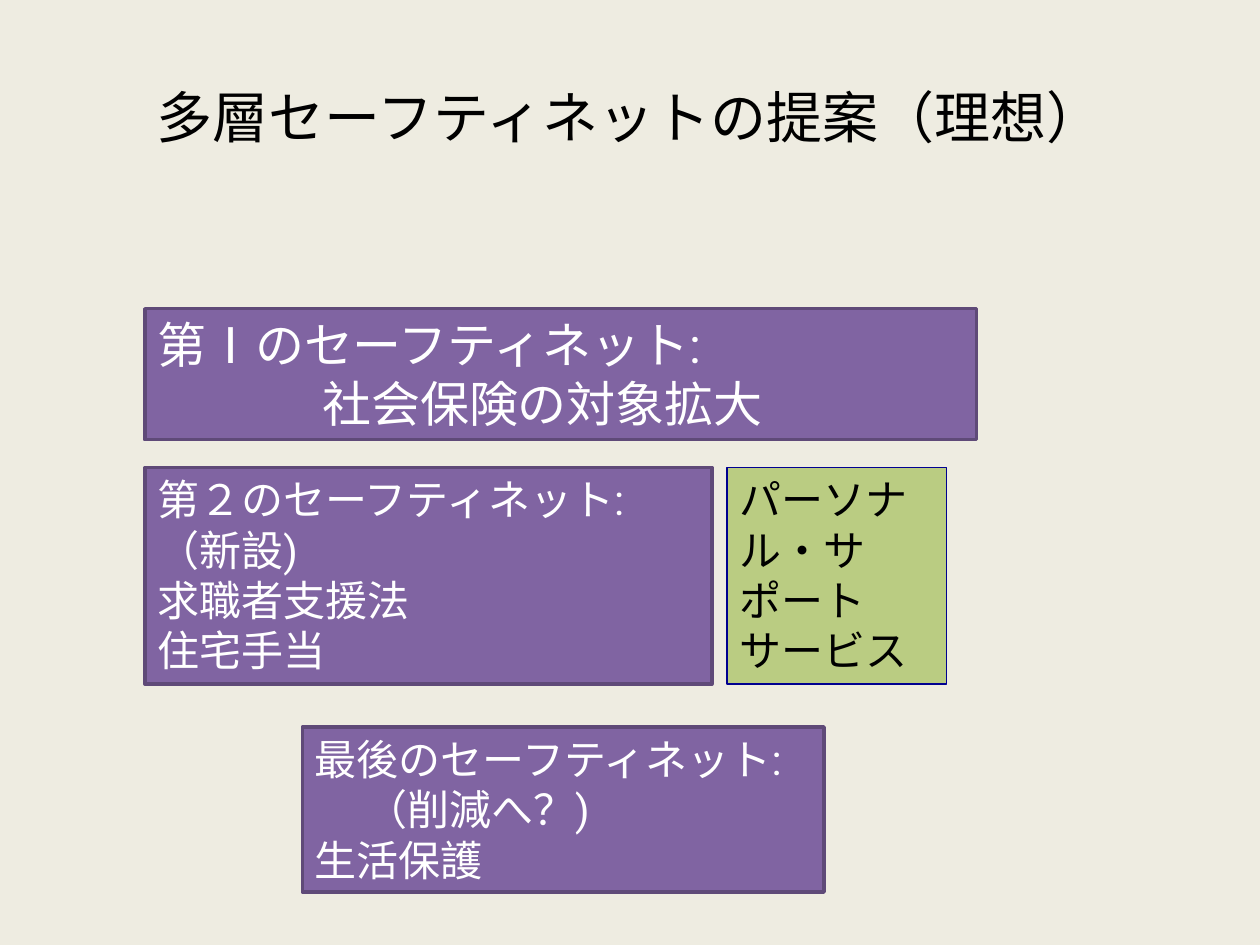
from pptx import Presentation
from pptx.dml.color import RGBColor
from pptx.enum.shapes import MSO_SHAPE
from pptx.enum.text import MSO_ANCHOR, PP_ALIGN
from pptx.util import Inches, Pt

RECT = MSO_SHAPE.RECTANGLE
TOP, MIDDLE = MSO_ANCHOR.TOP, MSO_ANCHOR.MIDDLE
LEFT, CENTER = PP_ALIGN.LEFT, PP_ALIGN.CENTER

FONT = "Roboto"
COLORS = {
    "background": "EEECE1",
    "net": "8064A2",
    "net_line": "5F4A78",
    "support": "BACC82",
    "support_line": "000090",
    "light": "FFFFFF",
    "dark": "000000",
}

# Content: each line is (text, left indent in inches)
TITLE = [("多層セーフティネットの提案（理想）", 0)]
FIRST_NET = [("第Ⅰのセーフティネット:", 0), ("社会保険の対象拡大", 1.31)]
SECOND_NET = [("第２のセーフティネット:", 0), ("（新設)", 0),
              ("求職者支援法", 0), ("住宅手当", 0)]
SUPPORT = [("パーソナル・サポートサービス", 0)]
LAST_NET = [("最後のセーフティネット:", 0), ("（削減へ？)", 0.4), ("生活保護", 0)]

# Box styles: fill, line, line width, text colour
STYLES = {
    "net": ("net", "net_line", 2, "light"),
    "support": ("support", "support_line", 0.75, "dark"),
}

# Boxes: lines, (left, top, width, height), text size, style
BOXES = [
    (FIRST_NET, (1.15, 2.45, 6.6, 1.04), 28, "net"),
    (SECOND_NET, (1.15, 3.71, 4.5, 1.72), 24, "net"),
    (SUPPORT, (5.77, 3.71, 1.74, 1.72), 24, "support"),
    (LAST_NET, (2.4, 5.77, 4.14, 1.31), 24, "net"),
]


def rgb(name):
    return RGBColor.from_string(COLORS[name])


def write(sp, lines, size, color, align=LEFT, anchor=TOP):
    tf = sp.text_frame
    tf.word_wrap = True
    tf.vertical_anchor = anchor
    tf.text = "\n".join(text for text, _ in lines)
    for p, (_, indent) in zip(tf.paragraphs, lines):
        p.alignment = align
        if indent:
            p._p.get_or_add_pPr().set("marL", str(Inches(indent)))
        for r in p.runs:
            r.font.name = FONT
            r.font.size = Pt(size)
            r.font.color.rgb = rgb(color)


def add_box(s, lines, place, size, style):
    fill, line, width, color = STYLES[style]
    sp = s.shapes.add_shape(RECT, *map(Inches, place))
    sp.shadow.inherit = False
    sp.fill.solid()
    sp.fill.fore_color.rgb = rgb(fill)
    sp.line.color.rgb = rgb(line)
    sp.line.width = Pt(width)
    write(sp, lines, size, color)


def main():
    prs = Presentation()
    prs.slide_width, prs.slide_height = Inches(10), Inches(7.5)
    s = prs.slides.add_slide(prs.slide_layouts[6])
    s.background.fill.solid()
    s.background.fill.fore_color.rgb = rgb("background")

    # Title
    title = s.shapes.add_textbox(*map(Inches, (0.5, 0.3, 9, 1.25)))
    write(title, TITLE, 32, "dark", CENTER, MIDDLE)

    # Safety nets and support service
    for box in BOXES:
        add_box(s, *box)

    prs.save("out.pptx")


if __name__ == "__main__":
    main()
